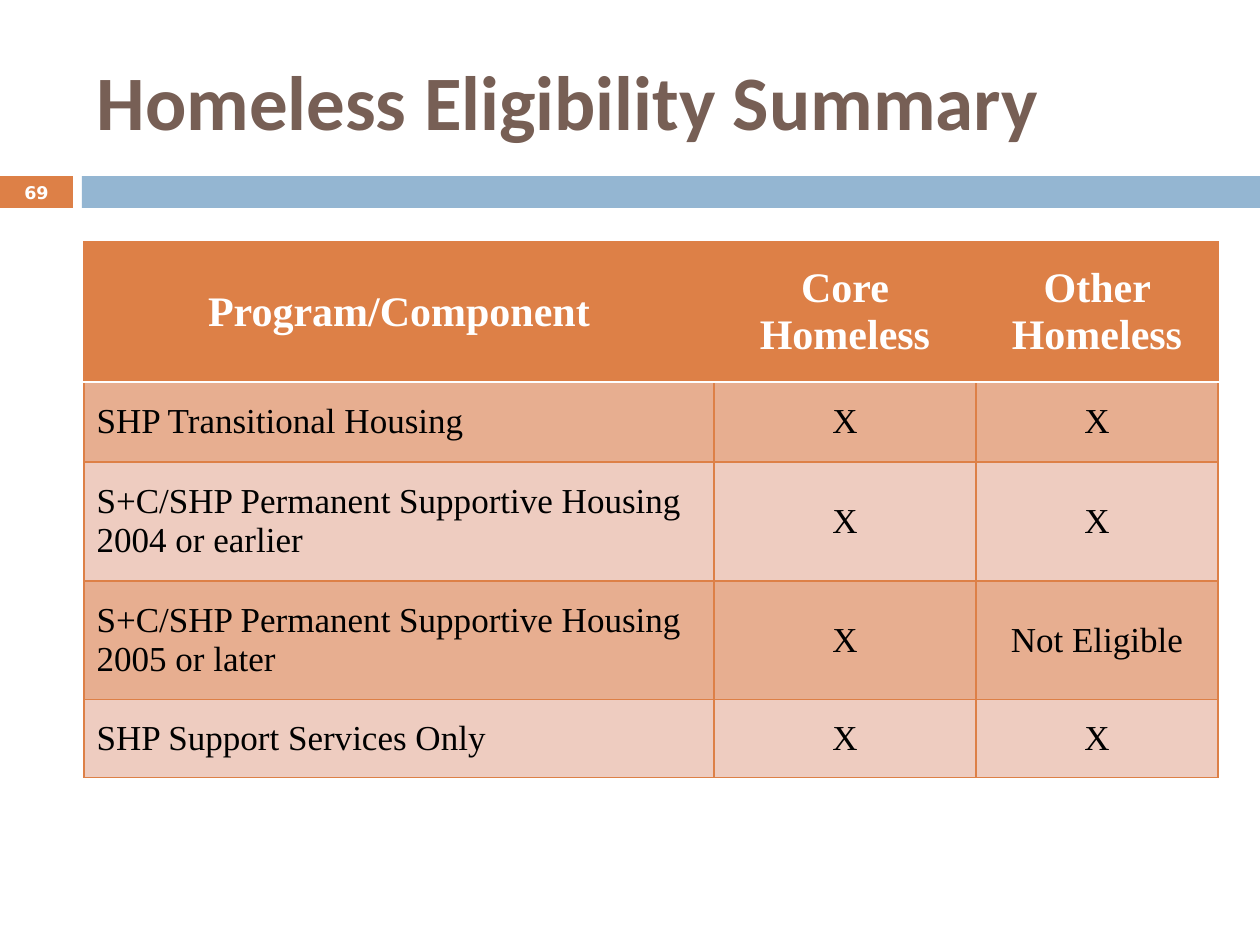
from lxml.etree import SubElement
from pptx import Presentation
from pptx.dml.color import RGBColor
from pptx.enum.shapes import MSO_SHAPE
from pptx.enum.text import MSO_ANCHOR, PP_ALIGN
from pptx.oxml.ns import qn
from pptx.util import Emu, Pt

PX = 914400 / 126

ORANGE = RGBColor(0xDD, 0x80, 0x47)
BAND_DARK = RGBColor(0xE7, 0xAE, 0x90)
BAND_LIGHT = RGBColor(0xEE, 0xCC, 0xC0)
BLUE = RGBColor(0x94, 0xB6, 0xD2)
BROWN = RGBColor(0x77, 0x5F, 0x55)
WHITE = RGBColor(0xFF, 0xFF, 0xFF)
BLACK = RGBColor(0x00, 0x00, 0x00)

COLUMN_WIDTHS = [630, 262, 242]
ROW_HEIGHTS = [140, 80, 119, 119, 78]
ELIGIBILITY = [
    ("Program/Component", "Core Homeless", "Other Homeless"),
    ("SHP Transitional Housing", "X", "X"),
    ("S+C/SHP Permanent Supportive Housing 2004 or earlier", "X", "X"),
    ("S+C/SHP Permanent Supportive Housing 2005 or later", "X", "Not Eligible"),
    ("SHP Support Services Only", "X", "X"),
]


def px(*lengths):
    """Turn px lengths into a list of EMU."""
    return [Emu(round(length * PX)) for length in lengths]


class SlideBuilder:
    """Holds the fonts and the slide being filled."""

    title_font = "Calibri"
    table_font = "Times New Roman"
    number_font = "DejaVu Sans"

    def __init__(self, slide):
        self.slide = slide

    def add_text(self, frame, text, font, size, color, bold=False, align=PP_ALIGN.LEFT):
        paragraph = frame.paragraphs[0]
        paragraph.alignment = align
        run = paragraph.add_run()
        run.text = text
        run.font.name = font
        run.font.size = Pt(size)
        run.font.bold = bold
        run.font.color.rgb = color

    def title(self, text, left, top, width, height):
        heading = self.slide.shapes.title
        heading.left, heading.top, heading.width, heading.height = px(left, top, width, height)
        heading.text_frame.vertical_anchor = MSO_ANCHOR.MIDDLE
        self.add_text(heading.text_frame, text, self.title_font, 44, BROWN, bold=True)

    def bar(self, color, left, top, width, height):
        band = self.slide.shapes.add_shape(MSO_SHAPE.RECTANGLE, *px(left, top, width, height))
        band.shadow.inherit = False
        band.fill.solid()
        band.fill.fore_color.rgb = color
        band.line.fill.background()

    def page_number(self, text, left, top, width, height):
        frame = self.slide.shapes.add_textbox(*px(left, top, width, height)).text_frame
        frame.word_wrap = True
        frame.margin_top = frame.margin_bottom = 0
        frame.vertical_anchor = MSO_ANCHOR.MIDDLE
        self.add_text(frame, text, self.number_font, 10, WHITE, True, PP_ALIGN.CENTER)

    def border(self, cell, side, color, width):
        line = SubElement(cell._tc.get_or_add_tcPr(), qn(f"a:ln{side}"), w=str(Pt(width)))
        fill = SubElement(line, qn("a:solidFill"))
        SubElement(fill, qn("a:srgbClr"), val=str(color))

    def table(self, rows, left, top, widths, heights):
        """Add a table with a header row and banded body rows."""
        box = px(left, top, sum(widths), sum(heights))
        grid = self.slide.shapes.add_table(len(rows), len(widths), *box).table
        for column, width in zip(grid.columns, px(*widths)):
            column.width = width
        for row, height in zip(grid.rows, px(*heights)):
            row.height = height
        for r, texts in enumerate(rows):
            for c, text in enumerate(texts):
                self.table_cell(grid.cell(r, c), text, r, c)

    def table_cell(self, cell, text, row, column):
        header = row == 0
        white_side = {0: "B", 1: "T"}.get(row)
        for side in "LRTB":
            if side == white_side:
                self.border(cell, side, WHITE, 1.5)
            else:
                self.border(cell, side, ORANGE, 0.79)
        cell.fill.solid()
        cell.fill.fore_color.rgb = ORANGE if header else BAND_DARK if row % 2 else BAND_LIGHT
        cell.vertical_anchor = MSO_ANCHOR.MIDDLE
        align = PP_ALIGN.CENTER if header or column else PP_ALIGN.LEFT
        size, color = (24, WHITE) if header else (20, BLACK)
        self.add_text(cell.text_frame, text, self.table_font, size, color, header, align)


def main():
    deck = Presentation()
    deck.slide_width, deck.slide_height = px(1260, 945)
    builder = SlideBuilder(deck.slides.add_slide(deck.slide_layouts[5]))
    builder.bar(ORANGE, 0, 176, 73, 32)
    builder.bar(BLUE, 82, 176, 1178, 32)
    builder.title("Homeless Eligibility Summary", 84, 21, 1071, 158)
    builder.table(ELIGIBILITY, 84, 242, COLUMN_WIDTHS, ROW_HEIGHTS)
    builder.page_number("69", 0, 175, 73, 34)
    deck.save("out.pptx")


if __name__ == "__main__":
    main()
